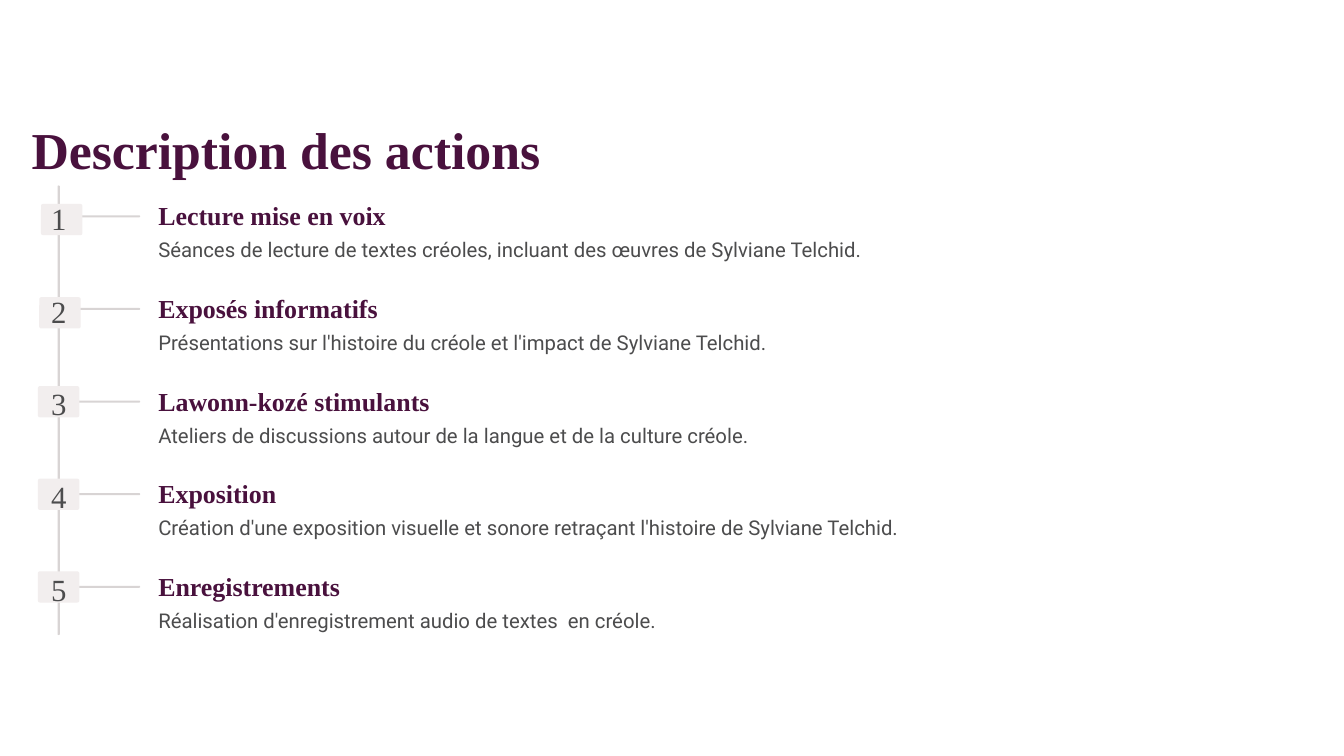
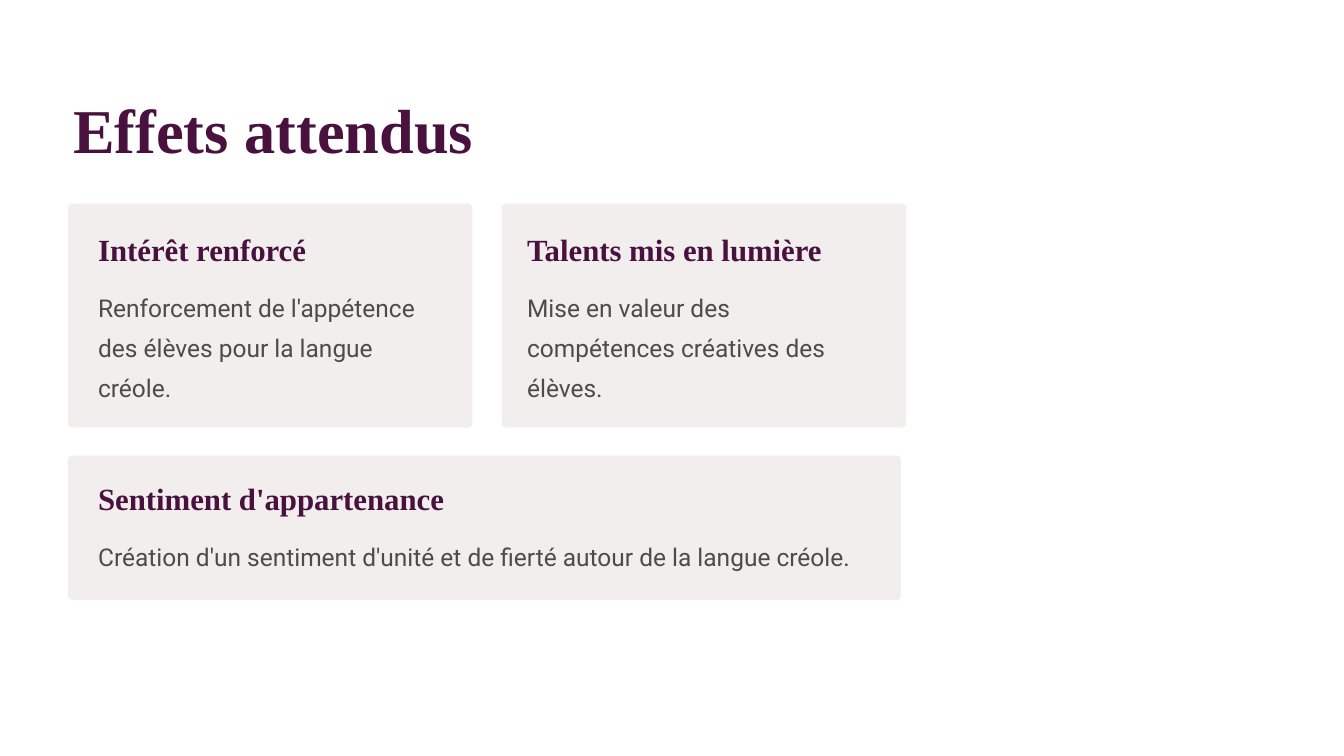
from pptx import Presentation
from pptx.dml.color import RGBColor
from pptx.enum.shapes import MSO_SHAPE
from pptx.enum.text import PP_ALIGN
from pptx.util import Inches, Pt

PLUM = RGBColor(0x49, 0x11, 0x3D)
GREY = RGBColor(0x4C, 0x4C, 0x4D)
LINE = RGBColor(0xD8, 0xD4, 0xD4)
PALE = RGBColor(0xF2, 0xEE, 0xEE)
SERIF = "Times New Roman"
SANS = "Roboto"
WIDE = Inches(13.33)
HIGH = Inches(7.5)
STEP = 12.25

ITEMS = [
    ("Lecture mise en voix",
     "Séances de lecture de textes créoles, incluant des œuvres de Sylviane Telchid.", 0.23, 0.4),
    ("Exposés informatifs",
     "Présentations sur l'histoire du créole et l'impact de Sylviane Telchid.", 0.1, 0.5),
    ("Lawonn-kozé stimulants",
     "Ateliers de discussions autour de la langue et de la culture créole.", 0, 0),
    ("Exposition",
     "Création d'une exposition visuelle et sonore retraçant l'histoire de Sylviane Telchid.", 0, 0),
    ("Enregistrements",
     "Réalisation d'enregistrement audio de textes  en créole.", 0, 0),
]

CARDS = [
    ("Intérêt renforcé", "Renforcement de l'appétence des élèves pour la langue créole.",
     (5.06, 26.95, 30.08, 29.6), 2.24, 3.33),
    ("Talents mis en lumière", "Mise en valeur des compétences créatives des élèves.",
     (37.34, 26.95, 30.08, 29.6), 1.88, 3.33),
    ("Sentiment d'appartenance",
     "Création d'un sentiment d'unité et de fierté autour de la langue créole.",
     (5.06, 60.27, 61.97, 19.07), 2.24, 2.93),
]


def place(x, y, w, h):
    return [round(part * size / 100)
            for part, size in zip((x, y, w, h), (WIDE, HIGH, WIDE, HIGH))]


def panel(slide, area, fill, curve):
    shape = slide.shapes.add_shape(MSO_SHAPE.ROUNDED_RECTANGLE, *place(*area))
    shape.adjustments[0] = min(0.5, Inches(curve) / min(shape.width, shape.height))
    shape.fill.solid()
    shape.fill.fore_color.rgb = fill
    shape.line.fill.background()
    shape.shadow.inherit = False


def label(slide, text, area, size, lead, face=SERIF, tint=PLUM,
          bold=False, align=PP_ALIGN.LEFT):
    frame = slide.shapes.add_textbox(*place(*area)).text_frame
    frame.margin_left = frame.margin_right = 0
    frame.margin_top = frame.margin_bottom = 0
    frame.word_wrap = True
    para = frame.paragraphs[0]
    para.text = text
    para.alignment = align
    para.line_spacing = Pt(lead)
    font = para.font
    font.name, font.size, font.bold = face, Pt(size), bold
    font.color.rgb = tint


def head(slide, text, area, size, lead):
    label(slide, text, area, size, lead, bold=True)


def body(slide, text, area, size, lead):
    label(slide, text, area, size, lead, SANS, GREY)


def entry(slide, index, title, text, right, down):
    top = 26.3 + index * STEP
    panel(slide, (5.7, top + 2.18, 4.73, 0.27), LINE, 0.02)
    panel(slide, (2.82 + right, top + 0.27 + down, 3.08, 4.13), PALE, 0.02)
    label(slide, str(index + 1), (3.38, top + 0.95, 2, 4.1), 22, 22,
          tint=GREY, align=PP_ALIGN.CENTER)
    head(slide, title, (11.78, top, 40, 4.3), 18.5, 23)
    body(slide, text, (11.78, top + 4, 85.45, 4.4), 14.5, 23.5)


def card(slide, title, text, area, pad, drop):
    left, top, width, _ = area
    panel(slide, area, PALE, 0.04)
    inner = width - 3.7
    head(slide, title, (left + pad, top + drop, inner, 5.2), 22, 27.5)
    body(slide, text, (left + pad, top + drop + 7.13, inner, 5.33), 17.5, 28.5)


def main():
    deck = Presentation()
    deck.slide_width, deck.slide_height = WIDE, HIGH
    blank = deck.slide_layouts[6]

    slide = deck.slides.add_slide(blank)
    head(slide, "Description des actions", (2.35, 15.2, 60, 8.6), 37, 46.5)
    panel(slide, (4.28, 24.53, 0.18, 59.47), LINE, 0.02)
    for index, item in enumerate(ITEMS):
        entry(slide, index, *item)

    slide = deck.slides.add_slide(blank)
    head(slide, "Effets attendus", (5.46, 11.67, 46.5, 10.4), 44.5, 55.5)
    for item in CARDS:
        card(slide, *item)

    deck.save("out.pptx")


if __name__ == "__main__":
    main()
